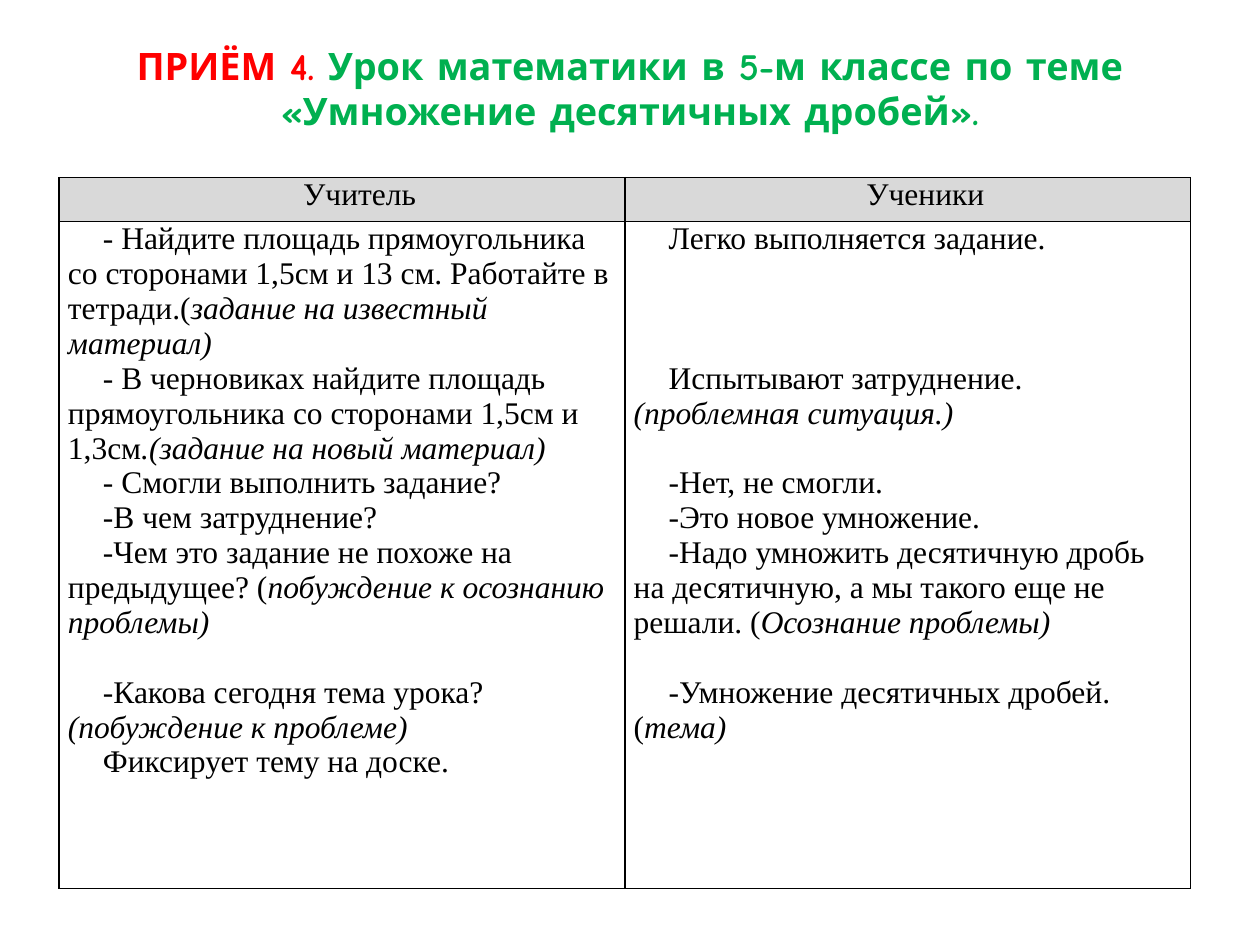
from lxml import etree
from pptx import Presentation
from pptx.dml.color import RGBColor
from pptx.enum.text import MSO_ANCHOR, PP_ALIGN
from pptx.oxml.ns import qn
from pptx.util import Pt

CENTER, LEFT, JUSTIFY = PP_ALIGN.CENTER, PP_ALIGN.LEFT, PP_ALIGN.JUSTIFY
MIDDLE = MSO_ANCHOR.MIDDLE
RED = RGBColor(0xFF, 0x00, 0x00)
GREEN = RGBColor(0x00, 0xB0, 0x50)
BLACK = RGBColor(0x00, 0x00, 0x00)
GRAY = RGBColor(0xD9, 0xD9, 0xD9)
LINE = 19.93
INDENT = Pt(20)


def add_run(paragraph, text, font, size, color, bold=False, italic=False):
    run = paragraph.add_run()
    run.text = text
    run.font.name = font
    run.font.size = Pt(size)
    run.font.color.rgb = color
    run.font.bold = bold
    run.font.italic = italic


def add_borders(cell):
    properties = cell._tc.get_or_add_tcPr()
    for position, side in enumerate(("a:lnL", "a:lnR", "a:lnT", "a:lnB")):
        border = etree.Element(qn(side), w=str(Pt(1)))
        fill = etree.SubElement(border, qn("a:solidFill"))
        etree.SubElement(fill, qn("a:srgbClr"), val=str(BLACK))
        properties.insert(position, border)


prs = Presentation()
prs.slide_width, prs.slide_height = Pt(720), Pt(540)
slide = prs.slides.add_slide(prs.slide_layouts[5])

title = slide.shapes.title
title.left, title.top, title.width, title.height = Pt(36), Pt(21.6), Pt(648), Pt(56.9)
title.text_frame.vertical_anchor = MIDDLE
heading = title.text_frame.paragraphs[0]
heading.alignment = CENTER
add_run(heading, "ПРИЁМ 4. ", "Comic Neue", 21.6, RED, bold=True)
add_run(heading, "Урок математики в 5-м классе по теме «Умножение десятичных дробей».",
        "Comic Neue", 21.6, GREEN, bold=True)

# Each paragraph: blank lines above, plain text, italic text
teacher = [
    (0, "- Найдите площадь прямоугольника со сторонами 1,5см и 13 см. Работайте в тетради.(",
     "задание на известный материал)"),
    (0, "- В черновиках найдите площадь прямоугольника со сторонами 1,5см и 1,3см",
     ".(задание на новый материал)"),
    (0, "- Смогли выполнить задание?", ""),
    (0, "-В чем затруднение?", ""),
    (0, "-Чем это задание не похоже на предыдущее? (", "побуждение к осознанию проблемы)"),
    (1, "-Какова сегодня тема урока? ", "(побуждение к проблеме)"),
    (0, "Фиксирует тему на доске.", ""),
]
pupils = [
    (0, "Легко выполняется задание.", ""),
    (3, "Испытывают затруднение. ", "(проблемная ситуация.)"),
    (1, "-Нет, не смогли.", ""),
    (0, "-Это новое умножение.", ""),
    (0, "-Надо умножить десятичную дробь на десятичную, а мы такого еще не решали. (",
     "Осознание проблемы)"),
    (1, "-Умножение десятичных дробей.(", "тема)"),
]
rows = [
    ([(0, "Учитель", "")], [(0, "Ученики", "")]),
    (teacher, pupils),
]

dialogue = slide.shapes.add_table(2, 2, Pt(33.84), Pt(101.5), Pt(646.6), Pt(406.1)).table
dialogue.first_row = False
dialogue.horz_banding = False
for column in dialogue.columns:
    column.width = Pt(323.3)
for row, height in zip(dialogue.rows, (25.2, 380.9)):
    row.height = Pt(height)

for row_index, contents in enumerate(rows):
    for column_index, lines in enumerate(contents):
        cell = dialogue.cell(row_index, column_index)
        cell.margin_left = cell.margin_right = Pt(5)
        cell.margin_top = cell.margin_bottom = 0
        if row_index == 0:
            cell.fill.solid()
            cell.fill.fore_color.rgb = GRAY
        else:
            cell.fill.background()
        add_borders(cell)
        for index, (gap, plain, italic) in enumerate(lines):
            frame = cell.text_frame
            paragraph = frame.add_paragraph() if index else frame.paragraphs[0]
            paragraph.alignment = CENTER if row_index == 0 else LEFT
            paragraph.space_before = Pt(gap * LINE)
            indents = paragraph._p.get_or_add_pPr()
            indents.set("marL", "0")
            indents.set("indent", str(INDENT))
            add_run(paragraph, plain, "Times New Roman", 18, BLACK)
            if italic:
                add_run(paragraph, italic, "Times New Roman", 18, BLACK, italic=True)

dialogue.cell(1, 1).text_frame.paragraphs[0].alignment = JUSTIFY

prs.save("out.pptx")
